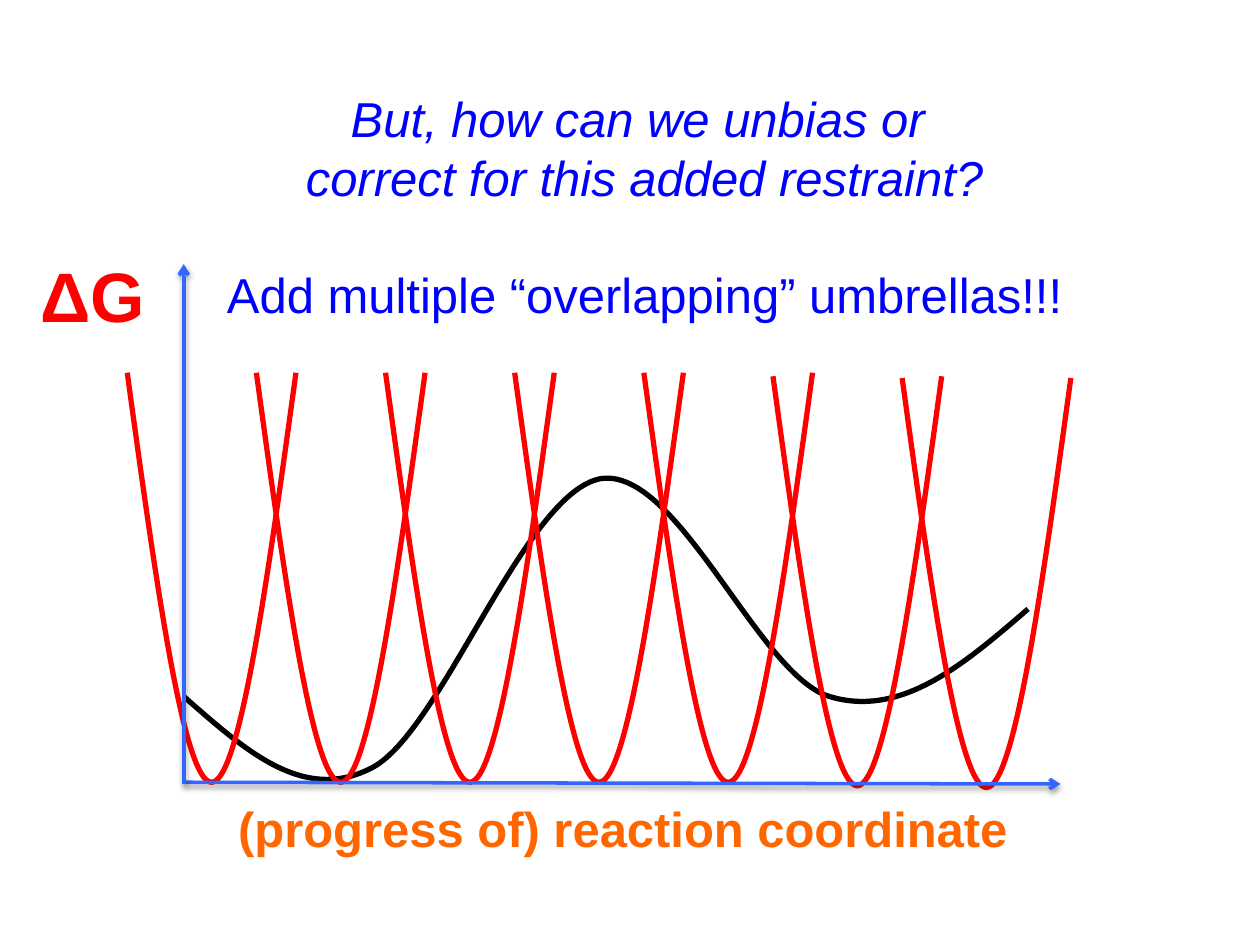
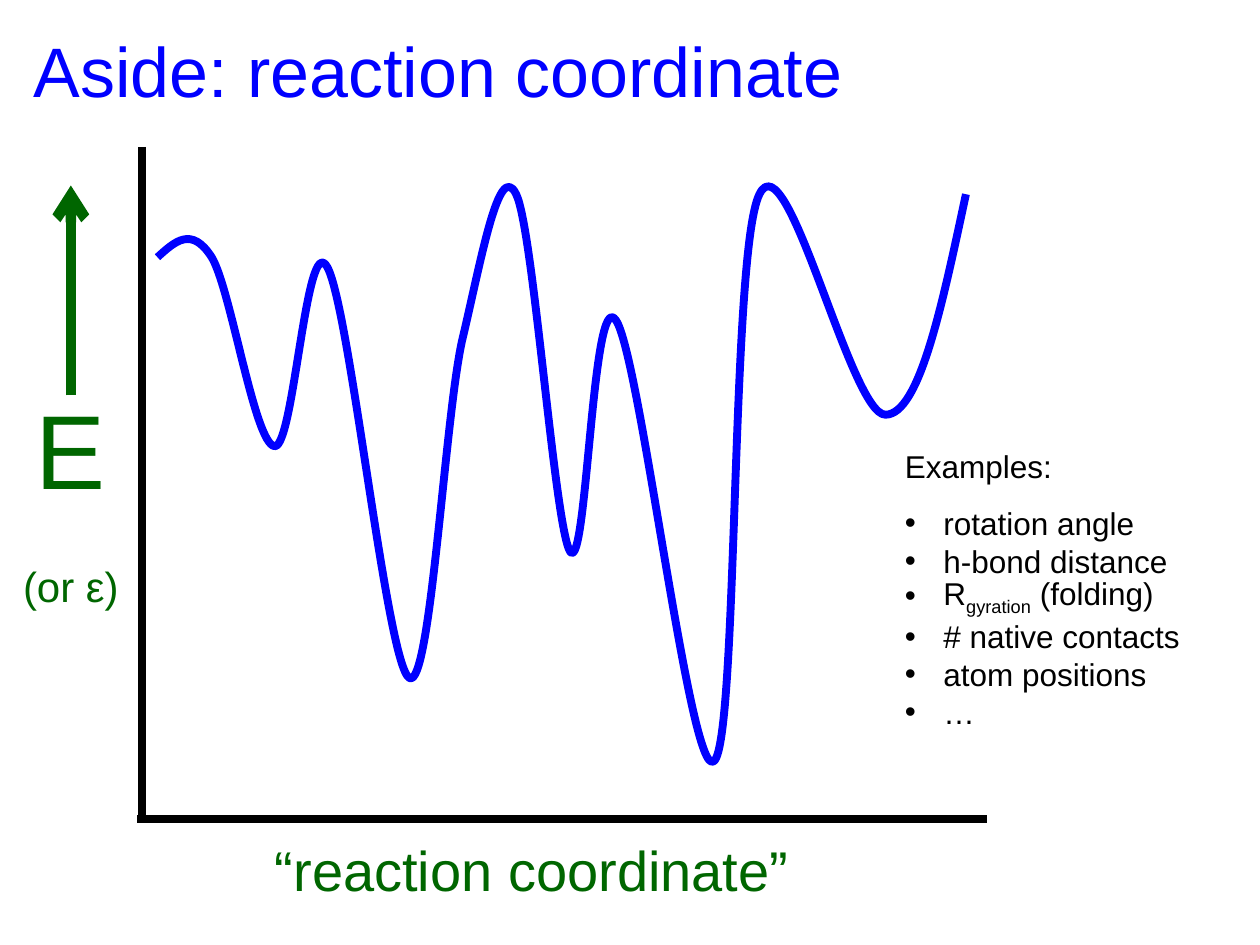
from pptx import Presentation
from pptx.dml.color import RGBColor
from pptx.enum.shapes import MSO_CONNECTOR
from pptx.enum.text import MSO_ANCHOR, MSO_AUTO_SIZE, PP_ALIGN
from pptx.oxml.xmlchemy import OxmlElement
from pptx.util import Pt

COLORS = {
    "blue": "0000FF", "red": "FF0000", "black": "000000",
    "axis": "3366FF", "orange": "FF6600", "green": "006600",
}
FONT = "Arial"
LINE_FACTOR = 1.2

# Boxes are left, top, width, height in points
UMBRELLA_PLOT = (105, 151, 501, 297)
ENERGY_PLOT = (81, 84, 483, 384)

# Each curve is a start point, then three points for every Bezier segment
BARRIER_CURVE = [
    (0, 247),
    (35, 277.5), (68.5, 308.5), (108, 287.5),
    (147.5, 266.5), (195, 130), (238.5, 122.5),
    (282.5, 116), (328.5, 235), (369, 247),
    (410, 259.5), (446, 228.5), (482.5, 197),
]
ENERGY_CURVE = [
    (9, 63),
    (19, 54), (28.5, 45), (40, 63),
    (51, 81), (64.5, 170), (76, 171),
    (87, 172), (94, 47), (106, 68.5),
    (119, 91), (140, 296), (153, 303.5),
    (165, 310), (173, 157), (183, 111),
    (194, 65), (204, 6.5), (214, 27),
    (224, 47), (236, 219), (245, 231.5),
    (254.5, 243), (257.5, 78.5), (271, 99),
    (285, 119), (313.5, 363), (327, 351),
    (341, 339.5), (336.5, 60), (353, 27),
    (369, -6), (405, 153), (425, 153),
    (444.5, 153), (457.5, 90), (471, 27),
]

WELL_WIDTH, WELL_DEPTH, WELL_STEP, WELL_START = 96.4, 234, 73.8, (-32.3, 62)
WELL_DROPS = (0, 0, 0, 0, 0, 2, 3)
WELL_PROFILE = (0, 0.5, 1, 1, 1, 0.5, 0)

EXAMPLES = [
    "rotation angle", "h-bond distance", ("R", "gyration", " (folding)"),
    "# native contacts", "atom positions", "…",
]


def xml_element(parent, tag, **attributes):
    element = OxmlElement(tag)
    for name, value in attributes.items():
        element.set(name, str(value))
    parent.append(element)
    return element


def set_line(shape, color, width):
    shape.line.color.rgb = RGBColor.from_string(COLORS[color])
    shape.line.width = Pt(width)


def add_curve(slide, origin, points, color, width):
    """Draw Bezier segments through points measured from the origin."""
    left, top = origin
    start, *rest = [(Pt(left + x), Pt(top + y)) for x, y in points]
    builder = slide.shapes.build_freeform(*start)
    builder.add_line_segments(rest, close=False)
    shape = builder.convert_to_shape()
    shape.shadow.inherit = False
    shape.fill.background()
    set_line(shape, color, width)
    # Turn every three straight steps into one cubic segment
    steps = shape.element.xpath(".//a:lnTo")
    for index in range(0, len(steps), 3):
        cubic = OxmlElement("a:cubicBezTo")
        steps[index].addprevious(cubic)
        for step in steps[index:index + 3]:
            cubic.append(step[0])
            step.getparent().remove(step)


def add_line(slide, start, end, color, width, arrow=False, shadow=False):
    connector = slide.shapes.add_connector(
        MSO_CONNECTOR.STRAIGHT, *[Pt(value) for value in (*start, *end)])
    set_line(connector, color, width)
    if arrow:
        xml_element(connector.element.xpath(".//a:ln")[0], "a:tailEnd", type="arrow")
    effects = xml_element(connector.element.spPr, "a:effectLst")
    if shadow:
        outer = xml_element(effects, "a:outerShdw", blurRad=Pt(3.1), dist=Pt(1.6),
                            dir=5400000, rotWithShape=0)
        black = xml_element(outer, "a:srgbClr", val=COLORS["black"])
        xml_element(black, "a:alpha", val=38000)


def format_paragraph(paragraph, size, color, align=PP_ALIGN.LEFT, before=0, **font_values):
    values = {"alignment": align, "line_spacing": Pt(size * LINE_FACTOR),
              "space_before": Pt(before), "space_after": Pt(0)}
    for name, value in values.items():
        setattr(paragraph, name, value)
    for run in paragraph.runs:
        for name, value in {"name": FONT, "size": Pt(size), **font_values}.items():
            setattr(run.font, name, value)
        run.font.color.rgb = RGBColor.from_string(COLORS[color])


def fill_text(shape, box, lines, wrap=False):
    """Place a text shape; each line is its text and its format values."""
    for name, value in zip(("left", "top", "width", "height"), box):
        setattr(shape, name, Pt(value))
    frame = shape.text_frame
    frame.word_wrap = wrap
    frame.auto_size = MSO_AUTO_SIZE.SHAPE_TO_FIT_TEXT
    frame.vertical_anchor = MSO_ANCHOR.TOP
    for index, (text, values) in enumerate(lines):
        paragraph = frame.add_paragraph() if index else frame.paragraphs[0]
        for part in (text,) if isinstance(text, str) else text:
            paragraph.add_run().text = part
        format_paragraph(paragraph, **values)
    return frame


def add_text(slide, box, lines):
    shape = slide.shapes.add_textbox(*[Pt(value) for value in box])
    return fill_text(shape, box, lines)


def add_umbrella_plot(slide, box):
    left, top, width, height = box
    bottom = top + height
    add_curve(slide, (left, top), BARRIER_CURVE, "black", 3)

    # Overlapping umbrella wells
    well = [(index * WELL_WIDTH / 6, depth * WELL_DEPTH)
            for index, depth in enumerate(WELL_PROFILE)]
    for index, drop in enumerate(WELL_DROPS):
        origin = (left + WELL_START[0] + index * WELL_STEP, top + WELL_START[1] + drop)
        add_curve(slide, origin, well, "red", 3)

    # Axes and their labels
    for start, end in (((left, bottom - 1), (left + width, bottom)),
                       ((left, bottom), (left, top))):
        add_line(slide, start, end, "axis", 2, arrow=True, shadow=True)
    add_text(slide, (left + 24, bottom + 5, 459, 41),
             [("(progress of) reaction coordinate",
               {"size": 28, "color": "orange", "bold": True})])
    add_text(slide, (left - 89, top - 10, 75, 55),
             [("ΔG", {"size": 40, "color": "red", "bold": True})])


def add_energy_plot(slide, box):
    left, top, width, height = box
    bottom = top + height
    add_curve(slide, (left, top), ENERGY_CURVE, "blue", 4.5)

    # Axes
    add_line(slide, (left, top), (left, bottom), "black", 4.5)
    add_line(slide, (left + width, bottom), (left - 2.5, bottom), "black", 4.5)

    # Energy label with its arrow
    label = {"color": "green", "align": PP_ALIGN.CENTER}
    add_text(slide, (left - 78, top + 132, 75, 138),
             [("E", {"size": 60, **label}),
              ("(or ε)", {"size": 24, "before": 24 * LINE_FACTOR, **label})])
    add_line(slide, (left - 40.5, top + 142), (left - 40.5, top + 22),
             "green", 6, arrow=True)

    # Coordinate label
    add_text(slide, (left + 69, bottom + 6, 346, 46),
             [("“reaction coordinate”", {"size": 32, "color": "green"})])


def add_examples(slide, box):
    style = {"size": 18, "color": "black"}
    lines = [("Examples:", style)]
    lines += [(text, {**style, "before": 0 if index else 9 * LINE_FACTOR})
              for index, text in enumerate(EXAMPLES)]
    frame = add_text(slide, box, lines)
    for paragraph in frame.paragraphs[1:]:
        properties = paragraph._p.get_or_add_pPr()
        properties.set("marL", str(Pt(22)))
        properties.set("indent", str(-Pt(22)))
        xml_element(properties, "a:buFont", typeface=FONT)
        xml_element(properties, "a:buChar", char="•")
        # The middle part of a split line is a subscript
        if len(paragraph.runs) == 3:
            paragraph.runs[1].font._element.set("baseline", "-25000")


def build_umbrella_slide(slide):
    style = {"size": 28, "color": "blue", "align": PP_ALIGN.CENTER}
    fill_text(slide.shapes.title, (113, 47, 510.5, 143),
              [("But, how can we unbias or ", {**style, "italic": True}),
               ("correct for this added restraint?", {**style, "italic": True}),
               ("Add multiple “overlapping” umbrellas!!!",
                {**style, "before": 28 * LINE_FACTOR})], wrap=True)
    add_umbrella_plot(slide, UMBRELLA_PLOT)


def build_coordinate_slide(slide):
    fill_text(slide.shapes.title, (12, 12, 524, 55),
              [("Aside: reaction coordinate", {"size": 40, "color": "blue"})])
    add_energy_plot(slide, ENERGY_PLOT)
    add_examples(slide, (510, 252, 191, 191))


def main():
    presentation = Presentation()
    presentation.slide_width, presentation.slide_height = Pt(720), Pt(540)
    title_only = presentation.slide_layouts[5]
    for build in (build_umbrella_slide, build_coordinate_slide):
        build(presentation.slides.add_slide(title_only))
    presentation.save("out.pptx")


if __name__ == "__main__":
    main()
